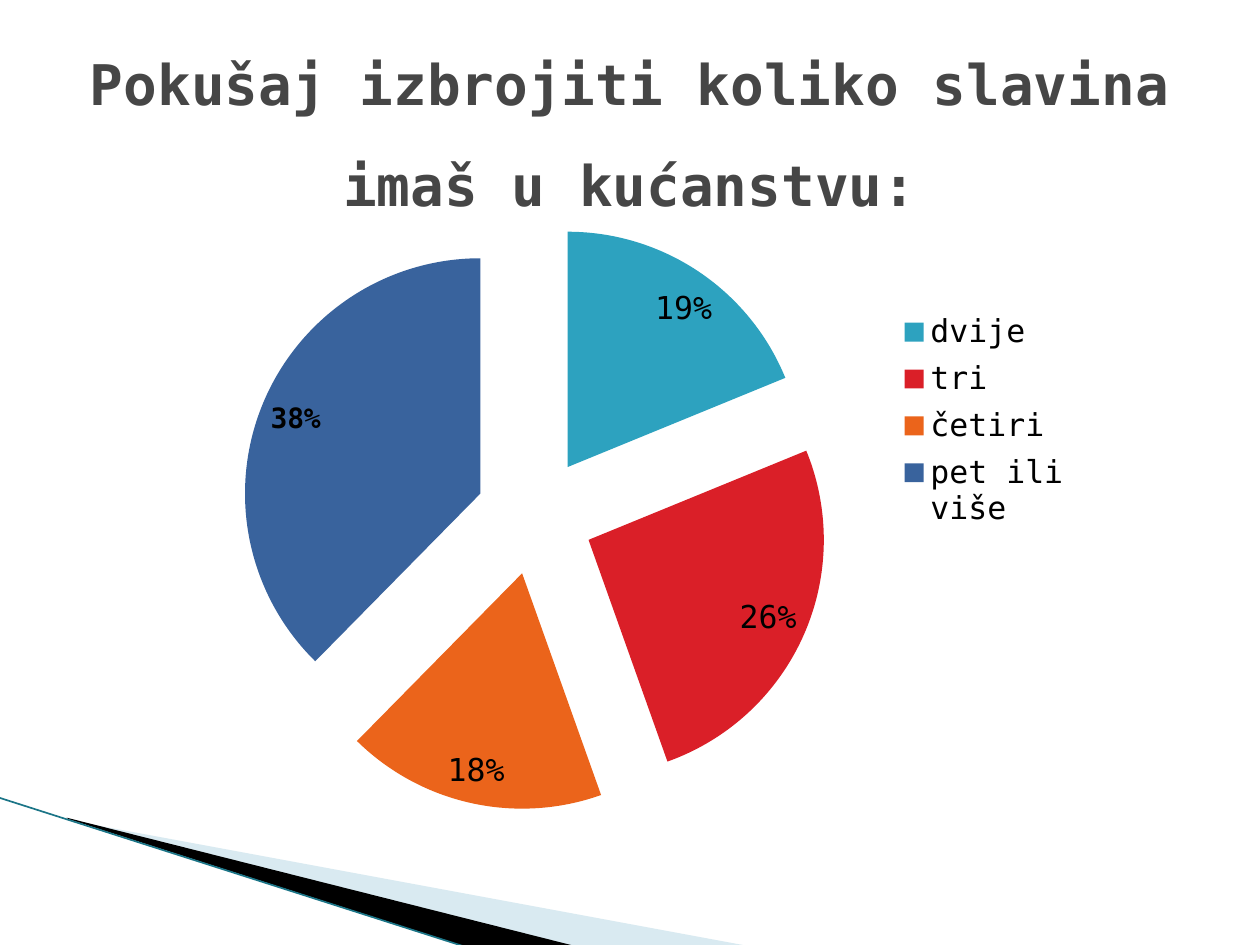
from dataclasses import dataclass
from typing import Optional

from lxml import etree
from pptx import Presentation
from pptx.chart.data import CategoryChartData
from pptx.dml.color import RGBColor
from pptx.enum.chart import XL_CHART_TYPE, XL_LABEL_POSITION, XL_LEGEND_POSITION
from pptx.enum.shapes import MSO_CONNECTOR
from pptx.enum.text import MSO_ANCHOR, PP_ALIGN
from pptx.oxml import parse_xml
from pptx.oxml.ns import nsdecls, qn
from pptx.util import Inches, Pt

FONT = "DejaVu Sans Mono"
COLORS = {
    "title": "464646", "text": "000000",
    "pale": "A0CBDC", "black": "000000", "edge": "1B7587",
    "teal": "2DA2BF", "red": "DA1F28", "orange": "EB641B", "blue": "39639D",
}
CHART_W, CHART_H = 9, 4.95


@dataclass
class Wedge:
    points: list[tuple[float, float]]
    color: str
    alpha: Optional[int] = None


@dataclass
class Slice:
    name: str
    value: float
    color: str
    shift: tuple[float, float] = (0, 0)  # label offset in inches
    size: float = 18
    bold: bool = False


WEDGES = [
    Wedge([(0.55, 6.51), (5.95, 7.51), (4.56, 7.51), (0.55, 6.5)], "pale", 40),
    Wedge([(0.53, 6.49), (4.57, 7.51), (3.72, 7.52), (0.54, 6.5)], "black"),
]
SLICES = [
    Slice("dvije", 19, "teal", shift=(0.14, 0.1)),
    Slice("tri", 26, "red", shift=(0, 0.03)),
    Slice("četiri", 18, "orange", shift=(-0.2, -0.05)),
    Slice("pet ili više", 38, "blue", shift=(0.01, -0.03), size=16, bold=True),
]


def rgb(name: str) -> RGBColor:
    return RGBColor.from_string(COLORS[name])


def set_font(font, size: float, color: str, bold: bool = False) -> None:
    font.name, font.size, font.bold = FONT, Pt(size), bold
    font.color.rgb = rgb(color)


def add_wedge(slide, wedge: Wedge) -> None:
    start, *rest = [(Inches(x), Inches(y)) for x, y in wedge.points]
    builder = slide.shapes.build_freeform(*start)
    builder.add_line_segments(rest, close=True)
    sp = builder.convert_to_shape()
    sp.shadow.inherit = False
    sp.line.fill.background()
    sp.fill.solid()
    sp.fill.fore_color.rgb = rgb(wedge.color)
    if wedge.alpha is not None:
        clr = sp.fill._xPr.find(".//" + qn("a:srgbClr"))
        etree.SubElement(clr, qn("a:alpha"), val=str(wedge.alpha * 1000))


def add_edge(slide) -> None:
    line = slide.shapes.add_connector(
        MSO_CONNECTOR.STRAIGHT, Inches(-0.01), Inches(6.33), Inches(3.71), Inches(7.52))
    line.line.color.rgb = rgb("edge")
    line.line.width = Pt(0.95)
    etree.SubElement(line._element.spPr, qn("a:effectLst"))


def manual_layout(x: float, y: float, w: float, h: float, inner: bool = False):
    """Place a chart part; lengths are inches within the chart."""
    target = '<c:layoutTarget val="inner"/>' if inner else ""
    return parse_xml(
        f'<c:layout {nsdecls("c")}><c:manualLayout>{target}'
        '<c:xMode val="edge"/><c:yMode val="edge"/>'
        f'<c:x val="{x / CHART_W}"/><c:y val="{y / CHART_H}"/>'
        f'<c:w val="{w / CHART_W}"/><c:h val="{h / CHART_H}"/>'
        '</c:manualLayout></c:layout>')


def format_label(point, s: Slice) -> None:
    label = point.data_label
    set_font(label.font, s.size, "text", s.bold)
    label.position = XL_LABEL_POSITION.INSIDE_END
    d_lbl = label._dLbl
    for tag, shown in (("c:showVal", "0"), ("c:showPercent", "1")):
        d_lbl.find(qn(tag)).set("val", shown)
    idx = d_lbl.find(qn("c:idx"))
    idx.addnext(parse_xml(
        f'<c:numFmt {nsdecls("c")} formatCode="0%" sourceLinked="0"/>'))
    dx, dy = s.shift
    idx.addnext(parse_xml(
        f'<c:layout {nsdecls("c")}><c:manualLayout><c:x val="{dx / CHART_W}"/>'
        f'<c:y val="{dy / CHART_H}"/></c:manualLayout></c:layout>'))


def add_pie(slide, slices: list[Slice]) -> None:
    data = CategoryChartData()
    data.categories = [s.name for s in slices]
    data.add_series("Series 1", [s.value for s in slices])
    chart = slide.shapes.add_chart(
        XL_CHART_TYPE.PIE, Inches(0.5), Inches(1.62),
        Inches(CHART_W), Inches(CHART_H), data).chart
    chart.has_title = False
    set_font(chart.font, 18, "text")

    # Legend
    chart.has_legend = True
    legend = chart.legend
    legend.position = XL_LEGEND_POSITION.RIGHT
    legend.include_in_layout = False
    set_font(legend.font, 18, "text")
    legend._element.find(qn("c:legendPos")).addnext(manual_layout(6.59, 0.79, 1.44, 1.86))

    # Plot area
    area = chart._chartSpace.chart.plotArea
    for old in area.findall(qn("c:layout")):
        area.remove(old)
    area.insert(0, manual_layout(1.41, 0.14, 4.67, 4.67, inner=True))

    # Slices
    plot = chart.plots[0]
    plot.vary_by_categories = True
    series = plot.series[0]
    for i, s in enumerate(slices):
        fill = series.points[i].format.fill
        fill.solid()
        fill.fore_color.rgb = rgb(s.color)
    explosion = parse_xml(f'<c:explosion {nsdecls("c")} val="25"/>')
    series._element.find(qn("c:dPt")).addprevious(explosion)

    # Percent labels
    labels = series.data_labels
    labels.show_percentage = True
    labels.show_value = False
    labels.number_format = "0%"
    labels.number_format_is_linked = False
    labels.position = XL_LABEL_POSITION.INSIDE_END
    set_font(labels.font, 18, "text")
    for i, s in enumerate(slices):
        format_label(series.points[i], s)


def add_text(slide, text: str, *, left: float, top: float, width: float, height: float,
             size: float, color: str, bold: bool = False, spacing: float = 1.0) -> None:
    box = slide.shapes.add_textbox(Inches(left), Inches(top), Inches(width), Inches(height))
    tf = box.text_frame
    tf.word_wrap = True
    tf.vertical_anchor = MSO_ANCHOR.MIDDLE
    p = tf.paragraphs[0]
    p.alignment = PP_ALIGN.CENTER
    p.line_spacing = spacing
    r = p.add_run()
    r.text = text
    set_font(r.font, size, color, bold)


def main() -> None:
    prs = Presentation()
    prs.slide_width, prs.slide_height = Inches(10), Inches(7.5)
    slide = prs.slides.add_slide(prs.slide_layouts[6])

    # Corner decoration
    for wedge in WEDGES:
        add_wedge(slide, wedge)
    add_edge(slide)

    # Chart and title
    add_pie(slide, SLICES)
    add_text(slide, "Pokušaj izbrojiti koliko slavina imaš u kućanstvu:",
             left=0.5, top=0.3, width=9, height=1.25,
             size=32, color="title", bold=True, spacing=1.5)
    prs.save("out.pptx")


if __name__ == "__main__":
    main()
